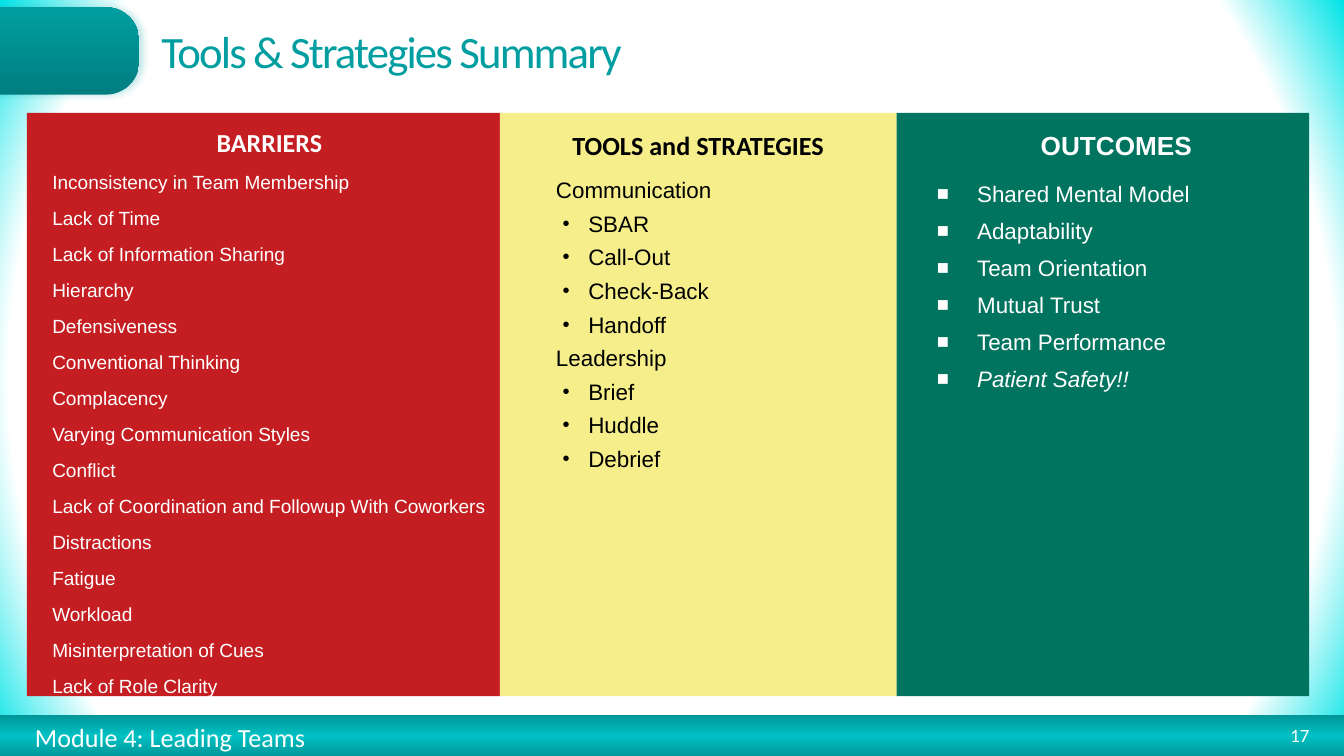
from pptx import Presentation
from pptx.dml.color import RGBColor
from pptx.enum.shapes import MSO_SHAPE as Shape
from pptx.enum.text import MSO_ANCHOR as Anchor, PP_ALIGN as Align
from pptx.oxml import parse_xml
from pptx.oxml.ns import nsdecls, qn
from pptx.util import Pt

WHITE, BLACK, TEAL = "FFFFFF", "000000", "009EA0"
TITLE = "Tools & Strategies Summary"
FOOTER, PAGE_NUMBER = "Module 4: Leading Teams", "17"

BARRIERS = [
    "Inconsistency in Team Membership", "Lack of Time",
    "Lack of Information Sharing", "Hierarchy", "Defensiveness",
    "Conventional Thinking", "Complacency", "Varying Communication Styles",
    "Conflict", "Lack of Coordination and Followup With Coworkers",
    "Distractions", "Fatigue", "Workload", "Misinterpretation of Cues",
    "Lack of Role Clarity",
]
TOOLS = {
    "Communication": ["SBAR", "Call-Out", "Check-Back", "Handoff"],
    "Leadership": ["Brief", "Huddle", "Debrief"],
}
OUTCOMES = ["Shared Mental Model", "Adaptability", "Team Orientation",
            "Mutual Trust", "Team Performance"]
GOAL = "Patient Safety!!"

# Paragraph styles: font, layout, (left margin, first-line indent), bullet
BARRIER = {"font": {"size": Pt(10.2), "name": "Arial"},
           "layout": {"line_spacing": 1.2, "space_after": Pt(4.6)},
           "indent": (20.2, -13.7)}
GROUP = {"font": {"size": Pt(12), "name": "Arial"},
         "layout": {"space_before": Pt(3.6)}, "indent": (23, 0)}
TOOL = {**GROUP, "indent": (40.3, -13.7), "bullet": "•"}
OUTCOME = {**GROUP, "layout": {"space_before": Pt(5.4)},
           "indent": (36, -21.6), "bullet": "■"}
SAFETY = {**OUTCOME, "font": {**OUTCOME["font"], "italic": True}}


def heading(size, font, spacing, indent=(0, 0)):
    return {"font": {"size": Pt(size), "name": font, "bold": True},
            "layout": {"alignment": Align.CENTER, "line_spacing": spacing,
                       "space_after": Pt(4.5)},
            "indent": indent}


tool_lines = []
for group, tools in TOOLS.items():
    tool_lines += [(group, GROUP)] + [(tool, TOOL) for tool in tools]

# Panels: width, fill, text colour, lines
PANEL_LEFT, PANEL_TOP, PANEL_HEIGHT = 14.4, 60.5, 312.5
PANELS = [
    (253.4, "C41E22", WHITE,
     [("BARRIERS", heading(13.9, "Calibri", 0.8, BARRIER["indent"]))]
     + [(text, BARRIER) for text in BARRIERS]),
    (212.6, "F5EE8B", BLACK,
     [("TOOLS and STRATEGIES", heading(14, "Calibri", 0.9))] + tool_lines),
    (220.9, "017460", WHITE,
     [("OUTCOMES", heading(14, "Arial", 0.9, OUTCOME["indent"]))]
     + [(text, OUTCOME) for text in OUTCOMES] + [(GOAL, SAFETY)]),
]


def rgb(value):
    return RGBColor.from_string(value)


def assign(target, values):
    for name, value in values.items():
        setattr(target, name, value)


def paint_gradient(owner, fill, stops, direction):
    """Replace the fill inside the owner element by a gradient."""
    fill.solid()
    solid = next(owner.iter(qn("a:solidFill")))
    marks = "".join(
        f'<a:gs pos="{place * 1000}"><a:srgbClr val="{colour}">'
        f'<a:alpha val="{alpha * 1000}"/></a:srgbClr></a:gs>'
        for place, colour, alpha in stops)
    solid.getparent().replace(solid, parse_xml(
        f'<a:gradFill {nsdecls("a")} rotWithShape="1">'
        f'<a:gsLst>{marks}</a:gsLst>{direction}</a:gradFill>'))


def linear(degrees):
    return f'<a:lin ang="{degrees * 60000}" scaled="0"/>'


def add_block(slide, kind, left, top, width, height):
    block = slide.shapes.add_shape(
        kind, Pt(left), Pt(top), Pt(width), Pt(height))
    block.shadow.inherit = False
    block.line.fill.background()
    return block


def write(para, text, colour, style):
    left, first = style.get("indent", (0, 0))
    props = para._p.get_or_add_pPr()
    props.set("marL", str(Pt(left)))
    props.set("indent", str(Pt(first)))
    if "bullet" in style:
        for tag, key, value in (("buSzPct", "val", "90000"),
                                ("buFont", "typeface", "Arial"),
                                ("buChar", "char", style["bullet"])):
            props.append(parse_xml(f'<a:{tag} {nsdecls("a")} {key}="{value}"/>'))
    assign(para, {"alignment": Align.LEFT, **style.get("layout", {})})
    span = para.add_run()
    span.text = text
    assign(span.font, style["font"])
    span.font.color.rgb = rgb(colour)
    return span


def add_panel(slide, left, width, fill, colour, lines):
    panel = add_block(slide, Shape.RECTANGLE, left, PANEL_TOP, width, PANEL_HEIGHT)
    panel.fill.solid()
    panel.fill.fore_color.rgb = rgb(fill)
    frame = panel.text_frame
    assign(frame, {"word_wrap": True, "vertical_anchor": Anchor.TOP,
                   "margin_left": Pt(7.2), "margin_right": Pt(7.2),
                   "margin_top": Pt(10.8), "margin_bottom": Pt(3.6)})
    for number, (text, style) in enumerate(lines):
        para = frame.add_paragraph() if number else frame.paragraphs[0]
        write(para, text, colour, style)


def add_footer_text(slide, text, left, top, width, size, align):
    box = slide.shapes.add_textbox(Pt(left), Pt(top), Pt(width), Pt(20.2))
    frame = box.text_frame
    assign(frame, {"word_wrap": True, "vertical_anchor": Anchor.MIDDLE,
                   "margin_left": 0, "margin_right": 0,
                   "margin_top": 0, "margin_bottom": 0})
    write(frame.paragraphs[0], text, WHITE,
          {"font": {"size": Pt(size), "name": "Calibri"},
           "layout": {"alignment": align}})


def add_tab(slide):
    tab = add_block(slide, Shape.ROUND_2_SAME_RECTANGLE, 10.8, -13, 46.8, 80.6)
    tab.rotation = 90
    tab.adjustments[0], tab.adjustments[1] = 0.378, 0.013
    paint_gradient(tab._element.spPr, tab.fill,
                   [(0, "007E80", 100), (100, TEAL, 100)], linear(180))
    effects = tab._element.spPr.find(qn("a:effectLst"))
    effects.append(parse_xml(
        f'<a:outerShdw {nsdecls("a")} blurRad="{Pt(4)}" dist="{Pt(2)}" dir="0">'
        f'<a:srgbClr val="{TEAL}"><a:alpha val="25000"/></a:srgbClr>'
        '</a:outerShdw>'))


def main():
    deck = Presentation()
    deck.slide_width, deck.slide_height = Pt(720), Pt(405)
    slide = deck.slides.add_slide(deck.slide_layouts[5])
    paint_gradient(
        slide._element, slide.background.fill,
        [(0, WHITE, 100), (86, WHITE, 100), (100, "00E3E6", 30)],
        '<a:path path="circle">'
        '<a:fillToRect l="50000" t="50000" r="50000" b="50000"/></a:path>')

    band = add_block(slide, Shape.RECTANGLE, -6.5, 383.3, 732.2, 22.2)
    paint_gradient(
        band._element.spPr, band.fill,
        [(0, "009698", 100), (50, "00C1C3", 100), (100, "009698", 100)],
        linear(270))
    add_footer_text(slide, FOOTER, 18.7, 384.5, 386, 14, Align.LEFT)
    add_footer_text(slide, PAGE_NUMBER, 643, 383.8, 58.3, 10, Align.RIGHT)
    add_tab(slide)

    title = slide.shapes.title
    assign(title, {"left": Pt(79.2), "top": 0, "width": Pt(631.4), "height": Pt(54)})
    title.text_frame.vertical_anchor = Anchor.MIDDLE
    span = write(title.text_frame.paragraphs[0], TITLE, TEAL,
                 {"font": {"size": Pt(24), "name": "Calibri"}})
    span._r.get_or_add_rPr().set("spc", "-100")

    left = PANEL_LEFT
    for width, fill, colour, lines in PANELS:
        add_panel(slide, left, width, fill, colour, lines)
        left += width
    deck.save("out.pptx")


if __name__ == "__main__":
    main()
